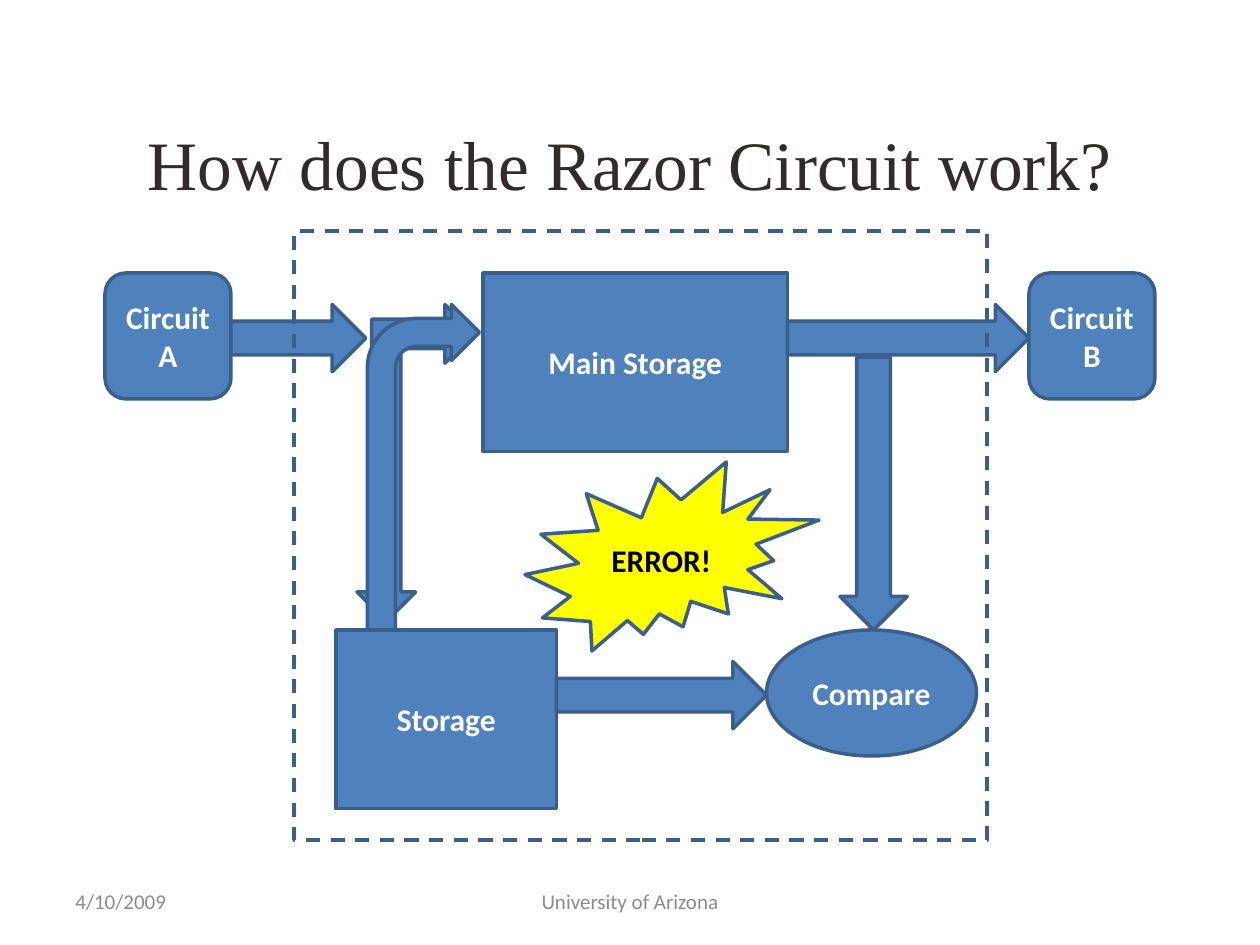
from pptx import Presentation
from pptx.dml.color import RGBColor
from pptx.enum.dml import MSO_LINE_DASH_STYLE as DASH
from pptx.enum.shapes import MSO_SHAPE as SHAPE
from pptx.enum.text import MSO_ANCHOR as ANCHOR, PP_ALIGN as ALIGN
from pptx.util import Pt

BLUE, OUTLINE, YELLOW = "4F81BD", "3A5F8C", "FFFF00"
WHITE, BLACK, GRAY, TITLE = "FFFFFF", "000000", "8C8C8C", "332B29"


def rgb(value):
    return RGBColor.from_string(value)


def place(sp, left, top, width, height):
    sp.left, sp.top, sp.width, sp.height = map(Pt, (left, top, width, height))


def write(sp, text, size, color, font="Calibri", bold=False, align=ALIGN.CENTER):
    tf = sp.text_frame
    tf.text = text
    tf.word_wrap = True
    tf.vertical_anchor = ANCHOR.MIDDLE
    for p in tf.paragraphs:
        p.alignment = align
        for r in p.runs:
            r.font.name, r.font.size, r.font.bold = font, Pt(size), bold
            r.font.color.rgb = rgb(color)


def add_title(s, text):
    sp = s.shapes.title
    place(sp, 36, 48, 648, 90)
    write(sp, text, 39.6, TITLE, "Times New Roman")


def add_footer(s, text, left, width, align):
    sp = s.shapes.add_textbox(Pt(left), Pt(500.5), Pt(width), Pt(28.75))
    write(sp, text, 12, GRAY, align=align)


def add_block(s, kind, box, text="", fill=BLUE, color=WHITE):
    sp = s.shapes.add_shape(kind, *map(Pt, box))
    sp.shadow.inherit = False
    if fill:
        sp.fill.solid()
        sp.fill.fore_color.rgb = rgb(fill)
    else:
        sp.fill.background()
    sp.line.color.rgb = rgb(OUTLINE)
    sp.line.width = Pt(2)
    if text:
        write(sp, text, 18, color, bold=True)
    return sp


def main():
    prs = Presentation()
    prs.slide_width, prs.slide_height = Pt(720), Pt(540)
    s = prs.slides.add_slide(prs.slide_layouts[5])

    # Title and footer
    add_title(s, "How does the Razor Circuit work?")
    add_footer(s, "4/10/2009", 36, 168, ALIGN.LEFT)
    add_footer(s, "University of Arizona", 246, 228, ALIGN.CENTER)

    # Outer circuits and storage blocks
    add_block(s, SHAPE.ROUNDED_RECTANGLE, (60, 156, 72, 72), "Circuit\nA")
    add_block(s, SHAPE.ROUNDED_RECTANGLE, (588, 156, 72, 72), "Circuit\nB")
    add_block(s, SHAPE.RECTANGLE, (192, 360, 126, 102), "Storage")
    add_block(s, SHAPE.RECTANGLE, (276, 156, 174, 102), "Main Storage")

    # Signal paths around the main storage
    add_block(s, SHAPE.RIGHT_ARROW, (450, 174, 138, 38.4))
    add_block(s, SHAPE.RIGHT_ARROW, (132, 174, 77, 38.4))
    add_block(s, SHAPE.DOWN_ARROW, (480, 204, 38.4, 156))
    split = add_block(s, SHAPE.LEFT_UP_ARROW, (204, 174, 67, 181))
    split.rotation = 180

    # Comparison and the path that restores the stored value
    add_block(s, SHAPE.OVAL, (438, 360, 120, 72), "Compare")
    add_block(s, SHAPE.RIGHT_ARROW, (318, 378, 120, 38.4))
    add_block(s, SHAPE.BENT_ARROW, (210, 174, 64, 186))
    add_block(s, SHAPE.EXPLOSION2, (300, 264, 168, 108), "ERROR!", YELLOW, BLACK)

    # Boundary of the Razor circuit
    boundary = add_block(s, SHAPE.RECTANGLE, (168, 132, 396, 348), fill=None)
    boundary.line.dash_style = DASH.DASH

    prs.save("out.pptx")


if __name__ == "__main__":
    main()
